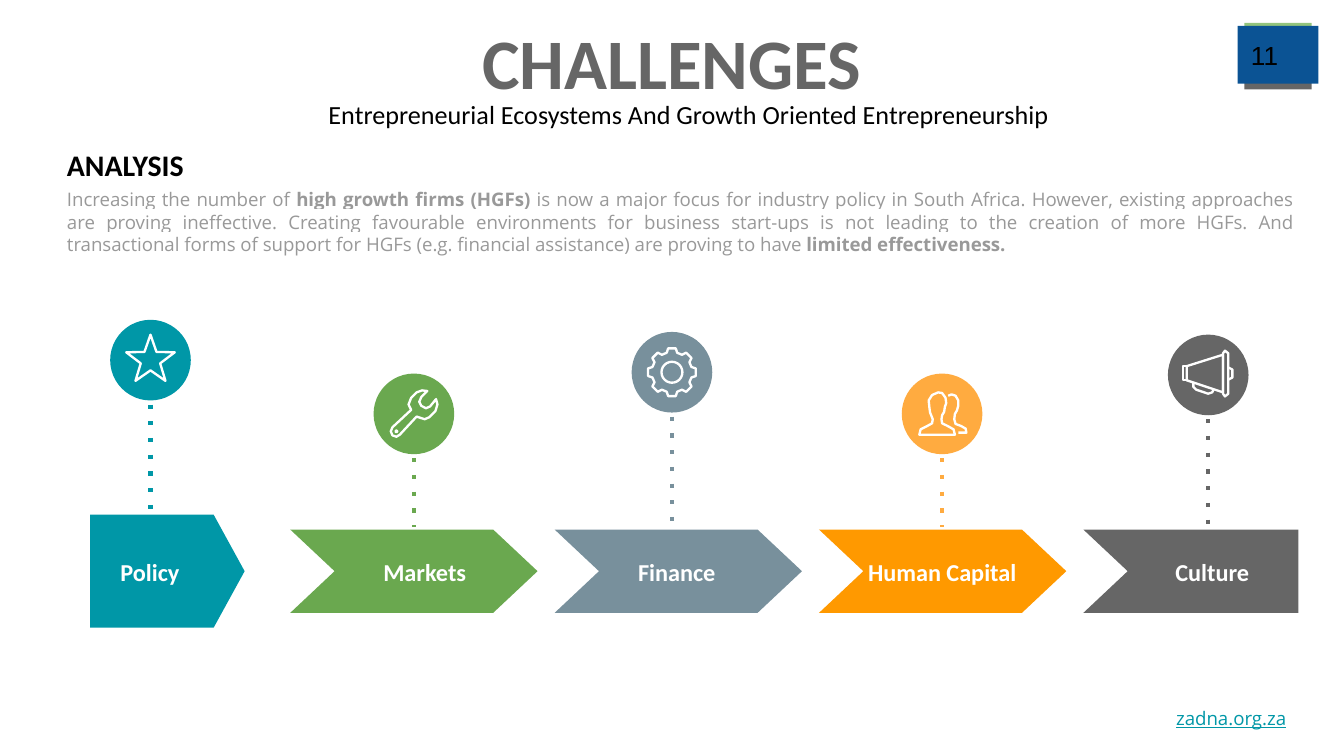
from math import cos, radians, sin
from typing import NamedTuple

from lxml import etree
from pptx import Presentation
from pptx.dml.color import RGBColor
from pptx.enum.shapes import MSO_CONNECTOR, MSO_SHAPE
from pptx.enum.text import MSO_ANCHOR, MSO_AUTO_SIZE, PP_ALIGN
from pptx.oxml.ns import qn
from pptx.util import Inches, Pt

RECT, OVAL = MSO_SHAPE.RECTANGLE, MSO_SHAPE.OVAL
ARROW = MSO_SHAPE.FLOWCHART_OFFPAGE_CONNECTOR
STRAIGHT = MSO_CONNECTOR.STRAIGHT
TOP, MIDDLE = MSO_ANCHOR.TOP, MSO_ANCHOR.MIDDLE
LEFT, CENTER, JUSTIFY = PP_ALIGN.LEFT, PP_ALIGN.CENTER, PP_ALIGN.JUSTIFY
FIXED = MSO_AUTO_SIZE.NONE

TEAL = RGBColor(0x00, 0x97, 0xA7)
GREEN = RGBColor(0x6A, 0xA8, 0x4F)
LIME = RGBColor(0x93, 0xC4, 0x7D)
SLATE = RGBColor(0x78, 0x90, 0x9C)
ORANGE = RGBColor(0xFF, 0x99, 0x00)
AMBER = RGBColor(0xFF, 0xAB, 0x40)
NAVY = RGBColor(0x0B, 0x53, 0x94)
GRAY = RGBColor(0x66, 0x66, 0x66)
PALE = RGBColor(0x99, 0x99, 0x99)
BLACK = RGBColor(0x00, 0x00, 0x00)
WHITE = RGBColor(0xFF, 0xFF, 0xFF)

# The slide is a grid of 100 columns and 56.25 rows of square cells.
COLS, ROWS = 100, 56.25
CELL = Inches(10) / COLS
DISC, GAP = 6, 0.3
BAND_TOP, BAND_TALL, NOTCH = 39.4, 6.2, 3.3
BAND_LEFT, PITCH = 21.6, 19.67


class Box(NamedTuple):
    col: float
    row: float
    wide: float
    tall: float


class Style(NamedTuple):
    color: RGBColor
    font: dict
    align: PP_ALIGN = CENTER
    anchor: MSO_ANCHOR = TOP


class Path(NamedTuple):
    """Points in cells, measured from the centre of a disc."""
    points: list
    closed: bool = True


class Step(NamedTuple):
    name: str
    tint: RGBColor
    disc: RGBColor
    mid: float
    top: float
    end: float
    label: tuple
    wide: float
    tip: float
    icon: list


def ring(radii: list, angles: list, x: float = 0, y: float = 0) -> Path:
    """Closed outline through polar points; zero degrees points up."""
    return Path([(x + r * sin(radians(a)), y - r * cos(radians(a)))
                 for r, a in zip(radii, angles)])


STAR = [ring([1.9, 0.76] * 5, range(0, 360, 36))]
GEAR = [
    ring([1.5, 1.8, 1.8, 1.5] * 8,
         [tooth + a for tooth in range(0, 360, 45) for a in (-15, -9, 9, 15)]),
    ring([0.78] * 24, range(0, 360, 15)),
]
WRENCH = [
    Path([(1.65, -1.1), (1.2, -0.55), (0.9, -0.42), (0.55, -0.6), (0.4, -0.9),
          (0.55, -1.25), (1, -1.7), (0.6, -1.75), (0.2, -1.6), (-0.2, -1.2),
          (-0.4, -0.7), (-0.2, -0.3), (-1.6, 1), (-1.72, 1.3), (-1.6, 1.6),
          (-1.3, 1.7), (-1.05, 1.55), (0.2, 0.2), (0.8, 0.4), (1.15, 0.25),
          (1.6, -0.2), (1.75, -0.7)]),
    ring([0.06] * 8, range(0, 360, 45), -1.3, 1.3),
]
PEOPLE = [
    Path([(-1.7, 1.55), (-1.6, 1.15), (-1.1, 0.9), (-0.75, 0.7), (-0.7, 0.4),
          (-0.9, -0.1), (-0.95, -0.5), (-1, -1), (-0.75, -1.4), (-0.3, -1.6),
          (0, -1.55), (0.25, -1.2), (0.3, -0.8), (0.2, -0.5), (0.15, -0.15),
          (0, 0.1), (-0.05, 0.4), (0, 0.7), (0.4, 0.9), (0.85, 1.15),
          (0.95, 1.55)]),
    Path([(0.45, -1.35), (0.7, -1.45), (1, -1.35), (1.2, -1), (1.2, -0.6),
          (1.1, -0.25), (0.95, 0), (0.9, 0.4), (1, 0.75), (1.4, 0.9),
          (1.75, 1.1), (1.8, 1.4), (1.2, 1.4)], False),
]
HORN = [
    Path([(-1.6, -0.65), (1.1, -1.5), (1.1, 1.3), (-1.6, 0.4)]),
    Path([(-1.6, -0.65), (-1.9, -0.65), (-1.9, 0.4), (-1.6, 0.4)], False),
    Path([(1.1, -1.6), (1.25, -1.8), (1.5, -1.6), (1.5, 1.4), (1.25, 1.6),
          (1.1, 1.4)]),
    Path([(1.5, -0.55), (1.8, -0.4), (1.8, 0.2), (1.5, 0.35)], False),
    Path([(-1.1, 0.55), (-1.1, 0.9), (-0.9, 1.1), (0, 1.4), (0.3, 1.3),
          (0.4, 1.1)], False),
]

STEPS = [
    Step("Policy", TEAL, TEAL, 11.2, 23.8, 39.4, (6.2, 9.9), 0, 0, STAR),
    Step("Markets", GREEN, GREEN, 30.8, 27.8, 39.2, (25.4, 12.4), 18.4, NOTCH, WRENCH),
    Step("Finance", SLATE, SLATE, 50, 24.7, 40.3, (44.9, 10.9), 18.4, NOTCH, GEAR),
    Step("Human Capital", ORANGE, AMBER, 70.1, 27.8, 39.2, (62.9, 14.4), 18.4, NOTCH, PEOPLE),
    Step("Culture", GRAY, GRAY, 89.9, 24.9, 40.5, (84.9, 10.6), 16, 0, HORN),
]

HEAD = Style(GRAY, {"name": "Calibri", "size": Pt(38), "bold": True})
SUB = Style(BLACK, {"name": "Calibri", "size": Pt(14)})
TOPIC = Style(BLACK, {"name": "Calibri", "size": Pt(16), "bold": True}, LEFT, MIDDLE)
BODY = Style(PALE, {"name": "Open Sans", "size": Pt(10)}, JUSTIFY)
LABEL = Style(WHITE, {"name": "Calibri", "size": Pt(13), "bold": True}, CENTER, MIDDLE)
PAGE = Style(BLACK, {"name": "Arial", "size": Pt(14)}, LEFT, MIDDLE)
SITE = Style(TEAL, {"name": "Open Sans", "size": Pt(10), "underline": True})


def cells(*counts: float) -> list:
    return [round(n * CELL) for n in counts]


def write(shape, runs: list, style: Style) -> None:
    """Fill a shape with one paragraph of (text, extra format) runs."""
    frame = shape.text_frame
    inset = Inches(0.1)
    layout = {"word_wrap": True, "auto_size": FIXED, "vertical_anchor": style.anchor,
              "margin_left": inset, "margin_right": inset,
              "margin_top": inset, "margin_bottom": inset}
    for key, value in layout.items():
        setattr(frame, key, value)
    para = frame.paragraphs[0]
    para.alignment = style.align
    for text, extra in runs:
        run = para.add_run()
        run.text = text
        for key, value in (style.font | extra).items():
            setattr(run.font, key, value)
        run.font.color.rgb = style.color


def text(slide, box: Box, runs: list, style: Style):
    shape = slide.shapes.add_textbox(*cells(*box))
    write(shape, runs, style)
    return shape


def mark(run, color: RGBColor) -> None:
    """Highlight a run that already has its font colour."""
    light = etree.Element(qn("a:highlight"))
    etree.SubElement(light, qn("a:srgbClr"), val=str(color))
    run._r.rPr.find(qn("a:solidFill")).addnext(light)


def solid(slide, kind: MSO_SHAPE, box: Box, color: RGBColor):
    shape = slide.shapes.add_shape(kind, *cells(*box))
    shape.shadow.inherit = False
    shape.fill.solid()
    shape.fill.fore_color.rgb = color
    shape.line.fill.background()
    return shape


def trace(slide, paths: list, col: float, row: float):
    """Build one freeform from paths placed around a cell position."""
    pen = None
    for path in paths:
        first, *rest = [cells(col + x, row + y) for x, y in path.points]
        if pen is None:
            pen = slide.shapes.build_freeform(*first)
        else:
            pen.move_to(*first)
        pen.add_line_segments(rest, close=path.closed)
    shape = pen.convert_to_shape()
    shape.shadow.inherit = False
    return shape


def band(slide, step: Step, col: float) -> None:
    half, neck = BAND_TALL / 2, step.wide - step.tip
    points = [(0, 0), (neck, 0), (step.wide, half), (neck, BAND_TALL),
              (0, BAND_TALL), (NOTCH, half)]
    shape = trace(slide, [Path(points)], col, BAND_TOP)
    shape.fill.solid()
    shape.fill.fore_color.rgb = step.tint
    shape.line.fill.background()


def stem(slide, step: Step) -> None:
    start = step.top + DISC + GAP
    line = slide.shapes.add_connector(
        STRAIGHT, *cells(step.mid, start, step.mid, step.end))
    line.line.color.rgb = step.disc
    line.line.width = Pt(2.25)
    props = line._element.spPr
    etree.SubElement(props.find(qn("a:ln")), qn("a:prstDash"), val="dot")
    etree.SubElement(props, qn("a:effectLst"))


def badge(slide, step: Step) -> None:
    half = DISC / 2
    solid(slide, OVAL, Box(step.mid - half, step.top, DISC, DISC), step.disc)
    icon = trace(slide, step.icon, step.mid, step.top + half)
    icon.fill.background()
    icon.line.color.rgb = WHITE
    icon.line.width = Pt(1.25)


def main() -> None:
    deck = Presentation()
    deck.slide_width, deck.slide_height = cells(COLS, ROWS)
    slide = deck.slides.add_slide(deck.slide_layouts[5])

    title = slide.shapes.title
    title.left, title.top, title.width, title.height = cells(3.4, 0.4, 93.2, 6.3)
    write(title, [("CHALLENGES", {})], HEAD)

    solid(slide, RECT, Box(92.6, 1.7, 5, 4), LIME)
    solid(slide, RECT, Box(92.6, 5.7, 5, 0.95), GRAY)
    write(solid(slide, RECT, Box(92.1, 1.93, 6, 4.3), NAVY), [("11", {})], PAGE)
    text(slide, Box(84.2, 51.6, 14.8, 3.3), [("zadna.org.za", {})], SITE)
    text(slide, Box(16.3, 6.3, 69.9, 2.7), [
        ("Entrepreneurial Ecosystems And Growth Oriented Entrepreneurship", {})], SUB)
    body = text(slide, Box(4, 13, 93.2, 5.2), [
        ("Increasing the number of ", {}),
        ("high growth firms (HGFs)", {"bold": True}),
        (" is now a major focus for industry policy in South Africa. However, existing "
         "approaches are proving ineffective. Creating favourable environments for "
         "business start-ups is not leading to the creation of more HGFs. And "
         "transactional forms of support for HGFs (e.g. financial assistance) are "
         "proving to have", {}),
        (" limited effectiveness. ", {"bold": True})], BODY)
    for run in body.text_frame.paragraphs[0].runs:
        mark(run, WHITE)
    text(slide, Box(4, 10.4, 14.4, 3.7), [("ANALYSIS", {})], TOPIC)

    arrow = solid(slide, ARROW, Box(8.25, 36.75, 8.4, 11.5), TEAL)
    arrow.rotation = 270
    for i, step in enumerate(STEPS):
        if i:
            band(slide, step, BAND_LEFT + (i - 1) * PITCH)
        col, wide = step.label
        text(slide, Box(col, 41.3, wide, 2.5), [(step.name, {})], LABEL)
        stem(slide, step)
        badge(slide, step)

    deck.save("out.pptx")


if __name__ == "__main__":
    main()
